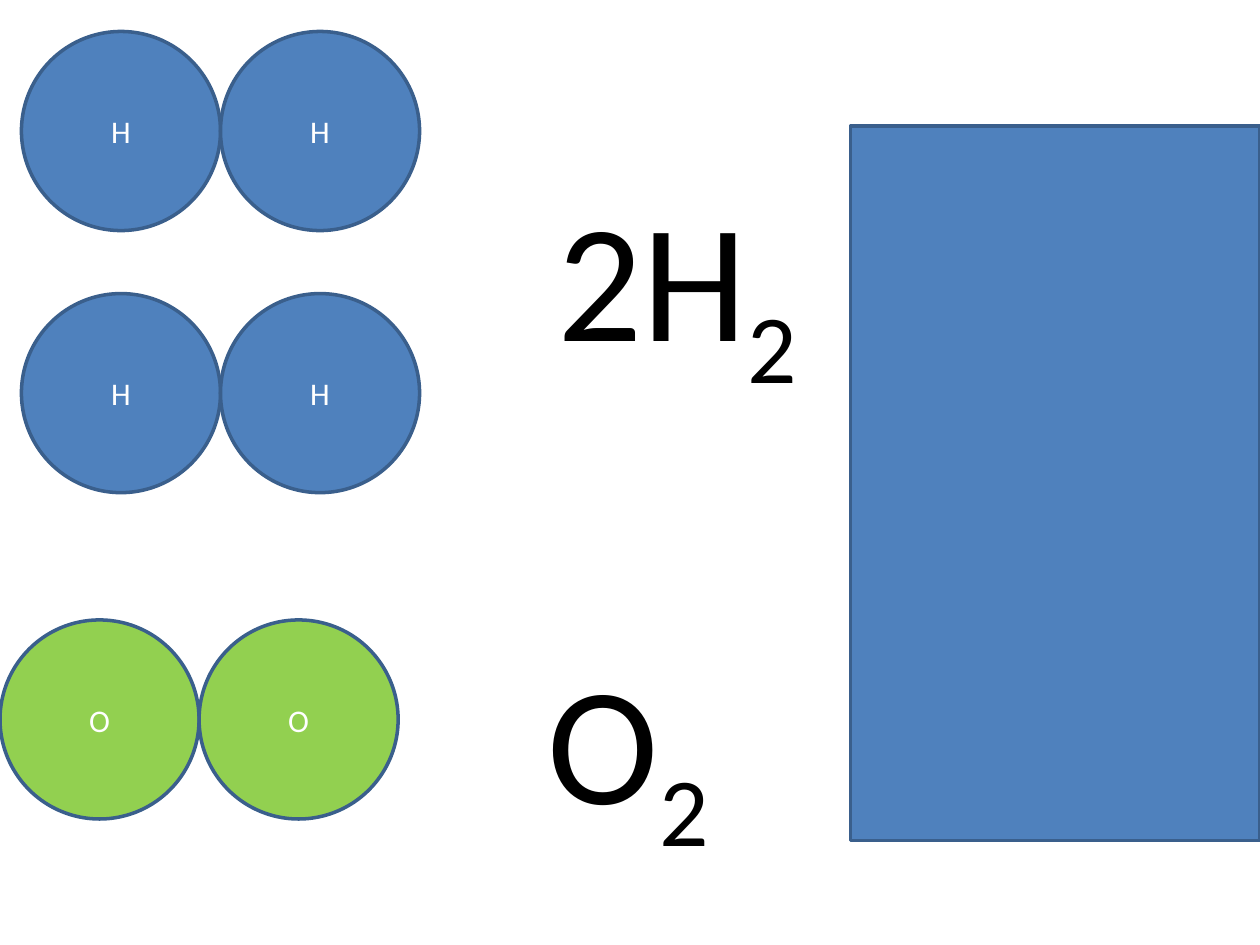
from pptx import Presentation
from pptx.dml.color import RGBColor
from pptx.enum.shapes import MSO_SHAPE
from pptx.enum.text import MSO_ANCHOR, MSO_AUTO_SIZE, PP_ALIGN
from pptx.util import Inches, Pt

BLUE = RGBColor(0x4F, 0x81, 0xBD)
GREEN = RGBColor(0x92, 0xD0, 0x50)
OUTLINE = RGBColor(0x3A, 0x5F, 0x8C)
WHITE = RGBColor(0xFF, 0xFF, 0xFF)
BLACK = RGBColor(0x00, 0x00, 0x00)

ATOM_SIZE = 1.58
ATOM_FONT = {"name": "Calibri", "size": Pt(18)}
FORMULA_FONT = {"name": "Calibri", "size": Pt(96)}


def add_run(paragraph, text, font_format, color):
    run = paragraph.add_run()
    run.text = text
    for attribute, value in font_format.items():
        setattr(run.font, attribute, value)
    run.font.color.rgb = color
    return run


def add_outlined_shape(shapes, kind, left, top, width, height, fill):
    shape = shapes.add_shape(
        kind, Inches(left), Inches(top), Inches(width), Inches(height))
    shape.shadow.inherit = False
    shape.fill.solid()
    shape.fill.fore_color.rgb = fill
    shape.line.color.rgb = OUTLINE
    shape.line.width = Pt(2)
    return shape


def add_molecule(shapes, symbol, left, top, fill):
    """Draw two touching atoms of one element."""
    for index in range(2):
        atom = add_outlined_shape(
            shapes, MSO_SHAPE.OVAL, left + index * ATOM_SIZE, top,
            ATOM_SIZE, ATOM_SIZE, fill)
        atom.text_frame.vertical_anchor = MSO_ANCHOR.MIDDLE
        paragraph = atom.text_frame.paragraphs[0]
        paragraph.alignment = PP_ALIGN.CENTER
        add_run(paragraph, symbol, ATOM_FONT, WHITE)


def add_formula(shapes, formula, subscript, left, top, width):
    text_box = shapes.add_textbox(
        Inches(left), Inches(top), Inches(width), Inches(1.72))
    text_frame = text_box.text_frame
    text_frame.word_wrap = False
    text_frame.auto_size = MSO_AUTO_SIZE.SHAPE_TO_FIT_TEXT
    paragraph = text_frame.paragraphs[0]
    add_run(paragraph, formula, FORMULA_FONT, BLACK)
    lowered = add_run(paragraph, subscript, FORMULA_FONT, BLACK)
    # Subscript needs the baseline attribute
    lowered.font._element.set("baseline", "-25000")


def main():
    presentation = Presentation()
    presentation.slide_width = Inches(10)
    presentation.slide_height = Inches(7.5)
    slide = presentation.slides.add_slide(presentation.slide_layouts[6])

    # Two hydrogen molecules with their formula
    hydrogen = slide.shapes.add_group_shape().shapes
    for top in (0.25, 2.33):
        add_molecule(hydrogen, "H", 0.17, top, BLUE)
    add_formula(hydrogen, "2H", "2", 4.33, 1.33, 2.18)

    # One oxygen molecule with its formula
    oxygen = slide.shapes.add_group_shape().shapes
    add_molecule(oxygen, "O", 0, 4.92, GREEN)
    add_formula(oxygen, "O", "2", 4.25, 5, 1.55)

    # Panel at the right edge
    add_outlined_shape(
        slide.shapes, MSO_SHAPE.RECTANGLE, 6.75, 1, 3.25, 5.67, BLUE)

    presentation.save("out.pptx")


if __name__ == "__main__":
    main()
